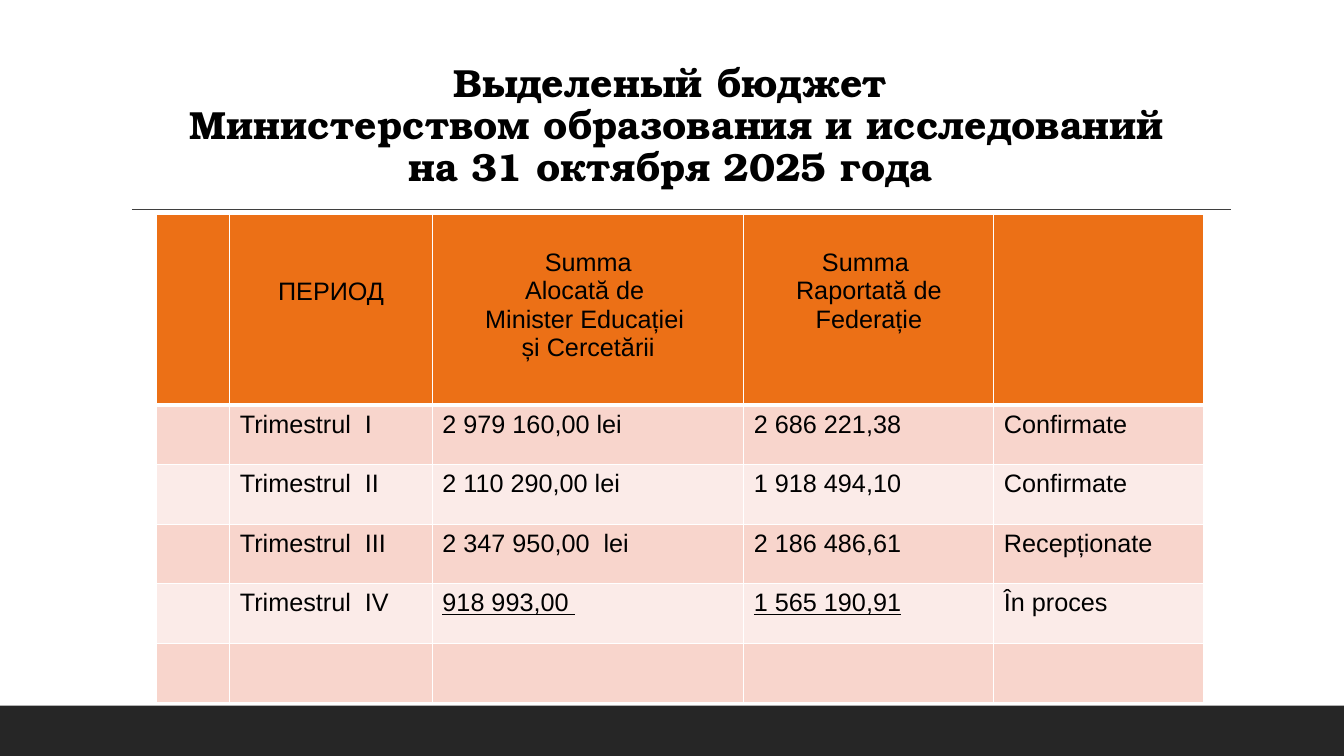
from pptx import Presentation
from pptx.dml.color import RGBColor as Rgb
from pptx.enum.shapes import MSO_CONNECTOR as Link, MSO_SHAPE as Kind
from pptx.enum.text import MSO_ANCHOR as Anchor, PP_ALIGN as Align
from pptx.oxml import parse_xml
from pptx.oxml.ns import nsdecls
from pptx.util import Pt

TITLE = "Выделеный бюджет\v Министерством образования и исcледований\vна 31 октября 2025 года"
HEADS = [
    [],
    ["ПЕРИОД"],
    ["Summa", "Alocată de ", "Minister Educației ", "și Cercetării"],
    ["Summa ", "Raportată de Federație"],
    [],
]
ROWS = [
    ["", "Trimestrul  I", "2 979 160,00 lei", "2 686 221,38", "Confirmate"],
    ["", "Trimestrul  II", "2 110 290,00 lei", "1 918 494,10", "Confirmate"],
    ["", "Trimestrul  III", "2 347 950,00  lei", "2 186 486,61", "Recepționate"],
    ["", "Trimestrul  IV", "918 993,00 ", "1 565 190,91", "În proces"],
    [""] * 5,
]
UNDER = {(4, 2), (4, 3)}
COLS = [52.6, 144.7, 222.5, 178.6, 149.8]
HIGH = [136.1] + [42.5] * len(ROWS)
DROPS = [3.6, 45, 24.3, 24.3, 3.6]
HEX = {"bar": "262626", "rule": "3F3F3F", "ink": "000000", "edge": "FFFFFF",
       "head": "EC7016", "odd": "F8D5CC", "even": "FBEBE8"}
BIG = {"name": "TeX Gyre Bonum", "size": Pt(28), "bold": True}
BODY = {"name": "Arial", "size": Pt(18), "bold": False}


def tint(name):
    return Rgb.from_string(HEX[name])


def write(para, text, form):
    para.text = text
    for run in para.runs:
        for key, val in form.items():
            setattr(run.font, key, val)
        run.font.color.rgb = tint("ink")


def edge(cell, row):
    wide = {"L": 1, "R": 1, "T": 3 if row == 1 else 1, "B": 3 if row == 0 else 1}
    props = cell._tc.get_or_add_tcPr()
    for spot, (side, size) in enumerate(wide.items()):
        props.insert(spot, parse_xml(
            f'<a:ln{side} {nsdecls("a")} w="{Pt(size)}"><a:solidFill>'
            f'<a:srgbClr val="{HEX["edge"]}"/></a:solidFill></a:ln{side}>'))


def fill(cell, row, col):
    cell.fill.solid()
    shade = "head" if row == 0 else "odd" if row % 2 else "even"
    cell.fill.fore_color.rgb = tint(shade)
    edge(cell, row)
    lines = HEADS[col] if row == 0 else [ROWS[row - 1][col]]
    cell.margin_top = Pt(DROPS[col] if row == 0 else 3.6)
    form = {**BODY, "underline": (row, col) in UNDER}
    frame = cell.text_frame
    for spot, line in enumerate(lines):
        para = frame.add_paragraph() if spot else frame.paragraphs[0]
        para.alignment = Align.LEFT if row else Align.CENTER
        write(para, line, form)


def main():
    deck = Presentation()
    deck.slide_width, deck.slide_height = Pt(960), Pt(540)
    slide = deck.slides.add_slide(deck.slide_layouts[6])
    shapes = slide.shapes

    bar = shapes.add_shape(Kind.RECTANGLE, Pt(0), Pt(504), Pt(960), Pt(36))
    bar.shadow.inherit = False
    bar.fill.solid()
    bar.fill.fore_color.rgb = tint("bar")
    bar.line.fill.background()

    rule = shapes.add_connector(Link.STRAIGHT, Pt(94.3), Pt(149.6), Pt(879), Pt(149.6))
    rule.line.color.rgb = tint("rule")
    rule.line.width = Pt(1)
    rule._element.spPr.append(parse_xml(f'<a:effectLst {nsdecls("a")}/>'))

    frame = shapes.add_textbox(Pt(46.8), Pt(41), Pt(864), Pt(98.6)).text_frame
    frame.word_wrap = True
    frame.vertical_anchor = Anchor.BOTTOM
    para = frame.paragraphs[0]
    para.alignment = Align.CENTER
    para.line_spacing = 0.9
    write(para, TITLE, BIG)

    table = shapes.add_table(len(HIGH), len(COLS), Pt(111.6), Pt(153.4),
                             Pt(sum(COLS)), Pt(sum(HIGH))).table
    for col, size in zip(table.columns, COLS):
        col.width = Pt(size)
    for row, size in enumerate(HIGH):
        table.rows[row].height = Pt(size)
        for col in range(len(COLS)):
            fill(table.cell(row, col), row, col)

    deck.save("out.pptx")


if __name__ == "__main__":
    main()
